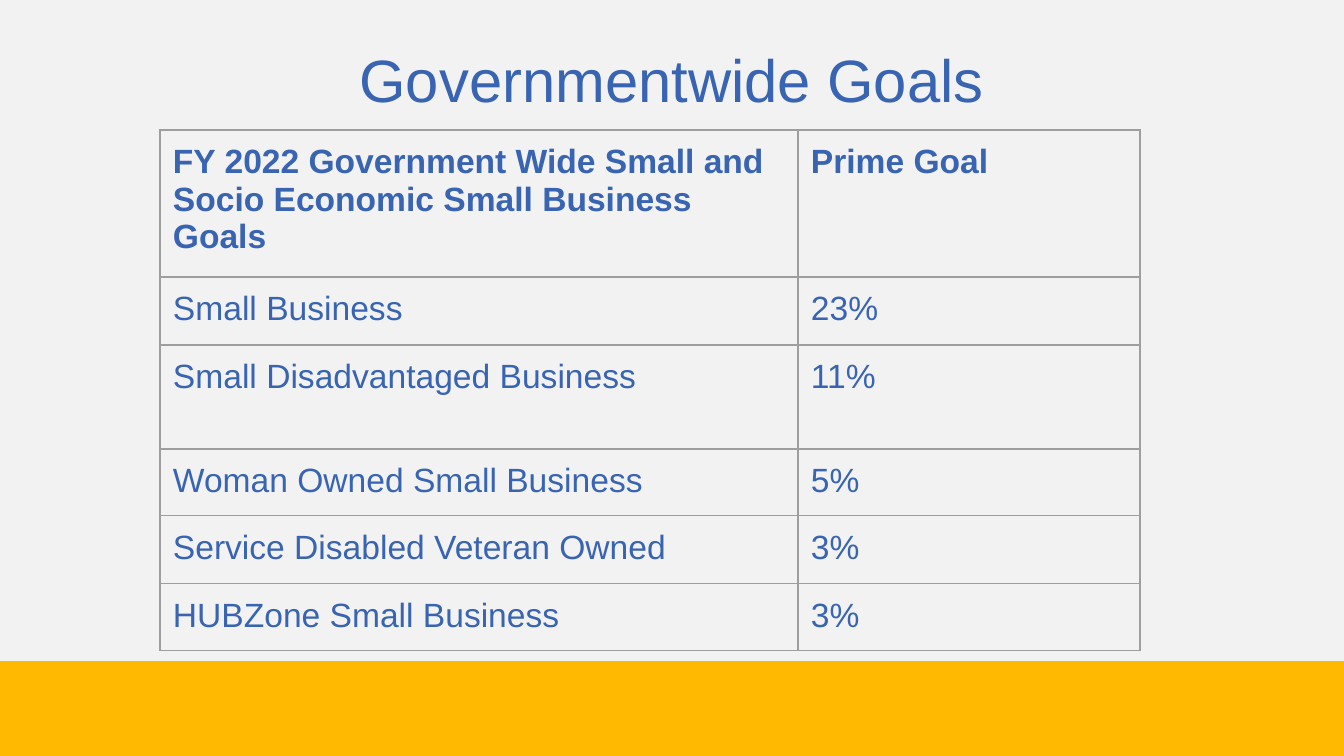
"""Build the slide of governmentwide small business goals."""
from dataclasses import dataclass

from lxml.etree import SubElement
from pptx import Presentation
from pptx.dml.color import RGBColor
from pptx.enum.shapes import MSO_SHAPE
from pptx.enum.text import MSO_ANCHOR, PP_ALIGN
from pptx.oxml.ns import qn
from pptx.slide import Slide
from pptx.table import _Cell
from pptx.text.text import _Paragraph
from pptx.util import Emu, Pt

SCALE = 914400 / 134.4
WIDTH, HEIGHT = 1344, 756
SPLIT = 661
PAD = 13
COLS = (638, 342)
BLUE = RGBColor(0x38, 0x64, 0xB2)
GOLD = RGBColor(0xFF, 0xBA, 0x00)
PALE = RGBColor(0xF2, 0xF2, 0xF2)
GRAY = RGBColor(0x9E, 0x9E, 0x9E)


@dataclass(frozen=True)
class Band:
    top: int
    height: int
    color: RGBColor


@dataclass(frozen=True)
class Goal:
    name: str
    share: str
    height: int
    bold: bool = False


BANDS = (Band(SPLIT, HEIGHT - SPLIT, GOLD), Band(0, SPLIT, PALE))
GOALS = (
    Goal("FY 2022 Government Wide Small and Socio Economic Small Business Goals",
         "Prime Goal", 140, True),
    Goal("Small Business", "23%", 68),
    Goal("Small Disadvantaged Business", "11%", 104),
    Goal("Woman Owned Small Business", "5%", 67),
    Goal("Service Disabled Veteran Owned", "3%", 68),
    Goal("HUBZone Small Business", "3%", 67),
)


def px(count: int) -> Emu:
    """Turn pixels into EMU."""
    return Emu(round(count * SCALE))


def style(para: _Paragraph, size: int, bold: bool = False) -> None:
    """Set the font of a paragraph."""
    font = para.font
    font.name, font.size, font.bold = "Arial", Pt(size), bold
    font.color.rgb = BLUE


def draw_band(slide: Slide, band: Band) -> None:
    """Draw a full-width band of colour."""
    shape = slide.shapes.add_shape(
        MSO_SHAPE.RECTANGLE, 0, px(band.top), px(WIDTH), px(band.height))
    shape.shadow.inherit = False
    shape.fill.solid()
    shape.fill.fore_color.rgb = band.color
    shape.line.fill.background()


def draw_title(slide: Slide, text: str) -> None:
    """Draw the centred title."""
    frame = slide.shapes.add_textbox(px(67), px(31), px(1210), px(74)).text_frame
    frame.word_wrap = True
    frame.vertical_anchor = MSO_ANCHOR.TOP
    frame.margin_top = px(12)
    para = frame.paragraphs[0]
    para.text = text
    para.alignment = PP_ALIGN.CENTER
    style(para, 32)


def add_edges(cell: _Cell) -> None:
    """Give a cell thin gray borders on all sides."""
    props = cell._tc.get_or_add_tcPr()
    for spot, side in enumerate(("lnL", "lnR", "lnT", "lnB")):
        line = SubElement(props, qn(f"a:{side}"), w=str(Pt(0.75)))
        fill = SubElement(line, qn("a:solidFill"))
        SubElement(fill, qn("a:srgbClr"), val=str(GRAY))
        props.insert(spot, line)


def fill_cell(cell: _Cell, text: str, bold: bool) -> None:
    """Write and style one table cell."""
    cell.margin_left = cell.margin_right = px(PAD)
    cell.margin_top = cell.margin_bottom = px(PAD)
    cell.fill.background()
    add_edges(cell)
    para = cell.text_frame.paragraphs[0]
    para.text = text
    style(para, 18, bold)


def draw_table(slide: Slide, goals: tuple[Goal, ...]) -> None:
    """Draw the table of goals."""
    tall = sum(goal.height for goal in goals)
    table = slide.shapes.add_table(
        len(goals), len(COLS), px(160), px(130), px(sum(COLS)), px(tall)).table
    table.first_row = table.horz_banding = False
    for col, width in zip(table.columns, COLS):
        col.width = px(width)
    for row, goal in zip(table.rows, goals):
        row.height = px(goal.height)
        for cell, text in zip(row.cells, (goal.name, goal.share)):
            fill_cell(cell, text, goal.bold)


def main() -> None:
    """Build and save the slide."""
    deck = Presentation()
    deck.slide_width, deck.slide_height = px(WIDTH), px(HEIGHT)
    slide = deck.slides.add_slide(deck.slide_layouts[6])
    for band in BANDS:
        draw_band(slide, band)
    draw_title(slide, "Governmentwide Goals")
    draw_table(slide, GOALS)
    deck.save("out.pptx")


if __name__ == "__main__":
    main()
